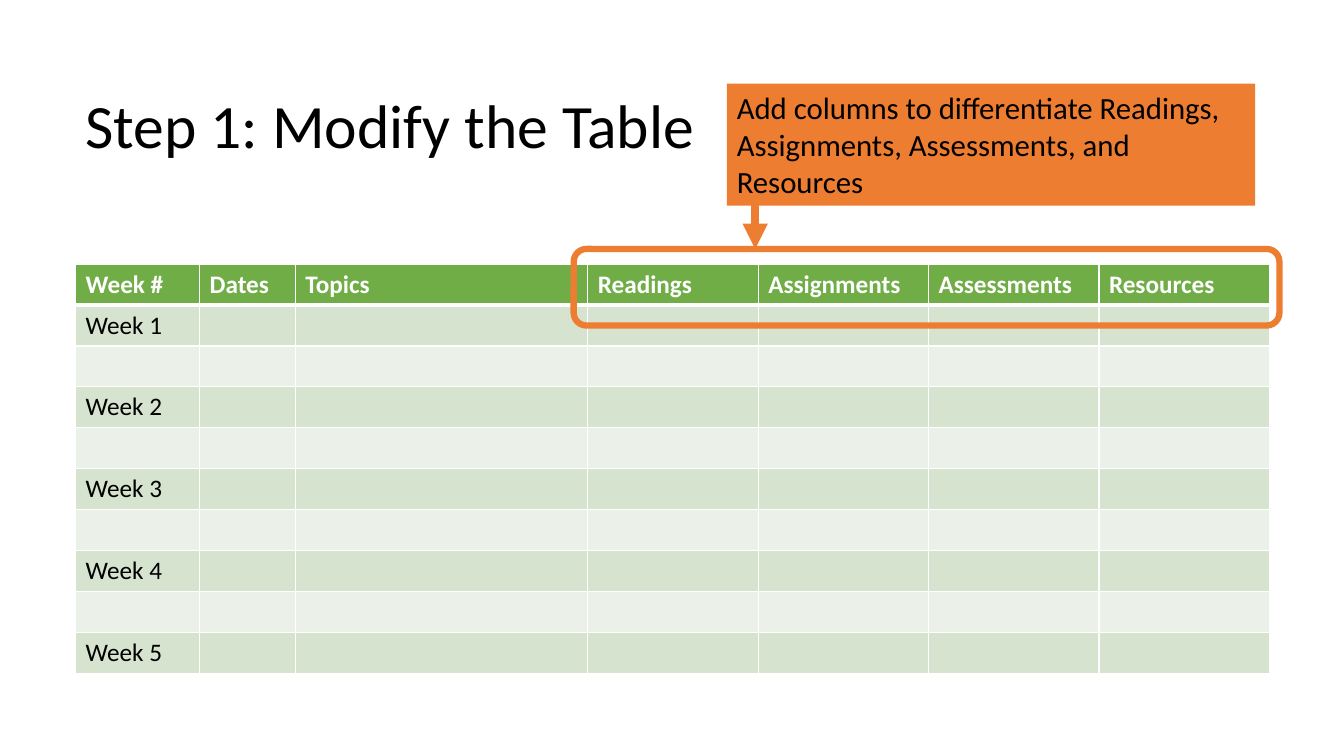
"""Build the slide on modifying the course schedule table."""
from dataclasses import dataclass

from lxml.etree import SubElement
from pptx import Presentation
from pptx.dml.color import RGBColor
from pptx.enum.shapes import MSO_CONNECTOR, MSO_SHAPE
from pptx.enum.text import MSO_ANCHOR, PP_ALIGN
from pptx.oxml.ns import qn
from pptx.util import Inches, Pt


@dataclass(frozen=True)
class Theme:
    font: str = "Calibri"
    black: str = "000000"
    white: str = "FFFFFF"
    header: str = "70AD47"
    odd_row: str = "D5E3CF"
    even_row: str = "EBF1E9"
    accent: str = "ED7D31"
    title_size: int = 44
    callout_size: int = 22
    table_size: int = 18


THEME = Theme()
COLUMNS = {
    "Week #": 1.23,
    "Dates": 0.95,
    "Topics": 2.9,
    "Readings": 1.69,
    "Assignments": 1.69,
    "Assessments": 1.69,
    "Resources": 1.69,
}
ROW_COUNT = 10


def rgb(color):
    return RGBColor.from_string(color)


def write(frame, text, size, color, bold=False):
    paragraph = frame.paragraphs[0]
    paragraph.text = text
    paragraph.alignment = PP_ALIGN.LEFT
    font = paragraph.font
    font.name = THEME.font
    font.size = Pt(size)
    font.bold = bold
    font.color.rgb = rgb(color)
    return paragraph


def add_title(slide, text, left, top, width, height):
    title = slide.shapes.add_textbox(*map(Inches, (left, top, width, height)))
    frame = title.text_frame
    frame.word_wrap = True
    frame.vertical_anchor = MSO_ANCHOR.MIDDLE
    write(frame, text, THEME.title_size, THEME.black).line_spacing = 0.9


def add_border(cell, side, width):
    properties = cell._tc.get_or_add_tcPr()
    border = SubElement(properties, qn(f"a:ln{side}"), w=str(Pt(width)))
    fill = SubElement(border, qn("a:solidFill"))
    SubElement(fill, qn("a:srgbClr"), val=THEME.white)


def style_cell(cell, row):
    is_header = row == 0
    for side in "LRTB":
        heavy = (is_header and side == "B") or (row == 1 and side == "T")
        add_border(cell, side, 3 if heavy else 1)
    cell.fill.solid()
    band = THEME.odd_row if row % 2 else THEME.even_row
    cell.fill.fore_color.rgb = rgb(THEME.header if is_header else band)


def cell_text(row, column, heading):
    if row == 0:
        return heading
    return f"Week {(row + 1) // 2}" if column == 0 and row % 2 else ""


def add_schedule(slide, left, top, width, height):
    schedule = slide.shapes.add_table(
        ROW_COUNT, len(COLUMNS), *map(Inches, (left, top, width, height))
    ).table
    for column, (heading, column_width) in enumerate(COLUMNS.items()):
        schedule.columns[column].width = Inches(column_width)
        for row in range(ROW_COUNT):
            cell = schedule.cell(row, column)
            style_cell(cell, row)
            color = THEME.black if row else THEME.white
            text = cell_text(row, column, heading)
            write(cell.text_frame, text, THEME.table_size, color, row == 0)


def add_callout(slide, text, left, top, width, height):
    callout = slide.shapes.add_shape(
        MSO_SHAPE.RECTANGLE, *map(Inches, (left, top, width, height))
    )
    callout.shadow.inherit = False
    callout.fill.solid()
    callout.fill.fore_color.rgb = rgb(THEME.accent)
    callout.line.fill.background()
    frame = callout.text_frame
    frame.word_wrap = True
    frame.vertical_anchor = MSO_ANCHOR.TOP
    write(frame, text, THEME.callout_size, THEME.black)


def add_highlight(slide, left, top, width, height):
    highlight = slide.shapes.add_shape(
        MSO_SHAPE.ROUNDED_RECTANGLE, *map(Inches, (left, top, width, height))
    )
    highlight.shadow.inherit = False
    highlight.fill.background()
    highlight.line.color.rgb = rgb(THEME.accent)
    highlight.line.width = Pt(4.5)


def add_arrow(slide, x, top, bottom):
    arrow = slide.shapes.add_connector(
        MSO_CONNECTOR.STRAIGHT, *map(Inches, (x, top, x, bottom))
    )
    arrow.line.color.rgb = rgb(THEME.accent)
    arrow.line.width = Pt(6)
    SubElement(arrow.line._get_or_add_ln(), qn("a:tailEnd"), type="triangle")
    SubElement(arrow._element.spPr, qn("a:effectLst"))


def main():
    deck = Presentation()
    deck.slide_width = Inches(13.33)
    deck.slide_height = Inches(7.5)
    slide = deck.slides.add_slide(deck.slide_layouts[6])
    add_title(slide, "Step 1: Modify the Table", 0.75, 0.54, 6.32, 1.47)
    add_schedule(slide, 0.75, 2.62, 11.84, 4.06)
    add_callout(
        slide,
        "Add columns to differentiate Readings, Assignments, Assessments, and Resources",
        7.21, 0.83, 5.24, 1.21,
    )
    add_highlight(slide, 5.69, 2.47, 7, 0.76)
    add_arrow(slide, 7.49, 2.01, 2.47)
    deck.save("out.pptx")


if __name__ == "__main__":
    main()
